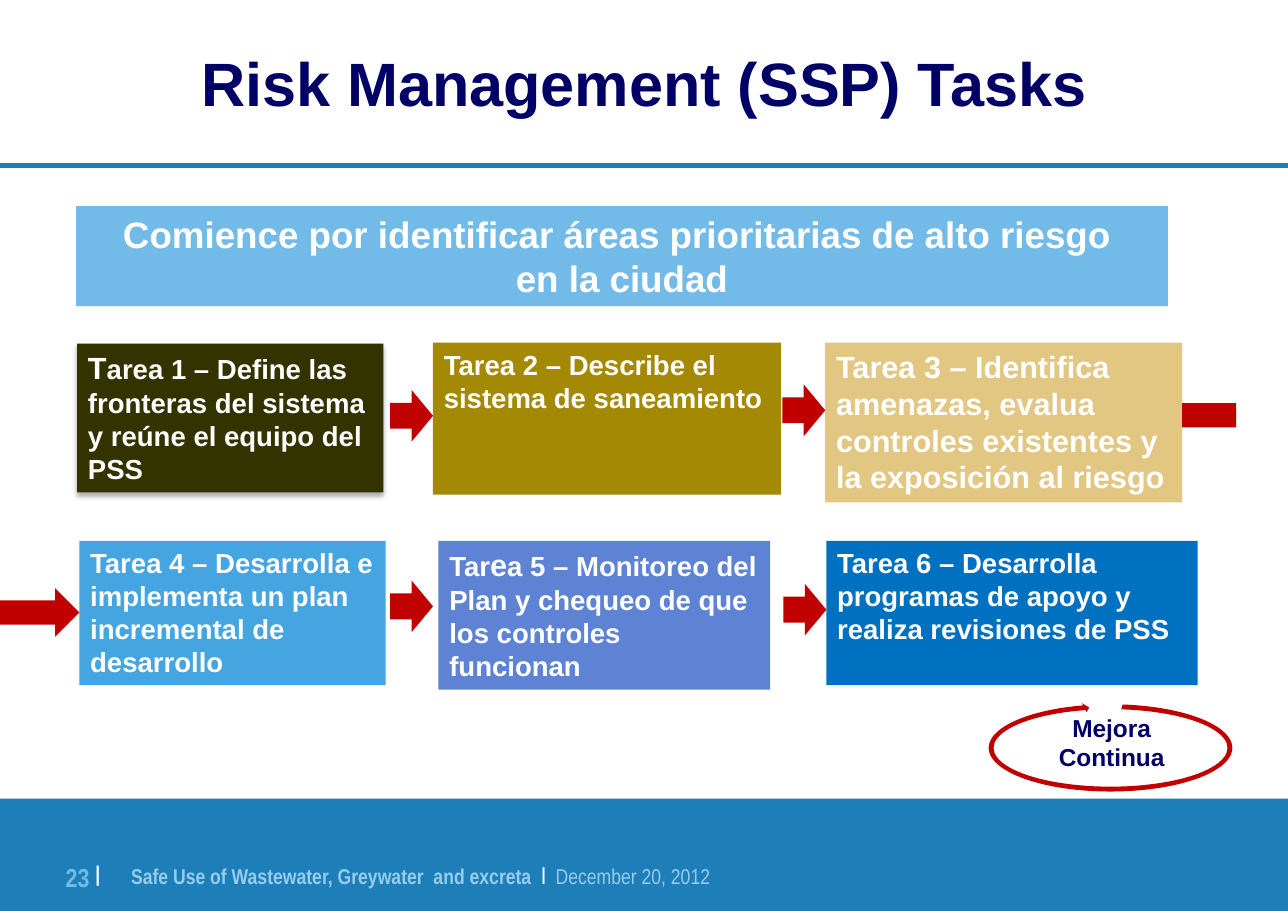
from lxml import etree
from pptx import Presentation, util as u
from pptx.dml.color import RGBColor
from pptx.enum import shapes, text
from pptx.oxml.ns import qn

WHITE, NAVY, RED, BLUE, SKY, PALE = "FFFFFF", "000066", "C00000", "1E7FB8", "72BBE8", "96CCEE"
LEFT, MID, RIGHT = text.PP_ALIGN.LEFT, text.PP_ALIGN.CENTER, text.PP_ALIGN.RIGHT
KIND = shapes.MSO_SHAPE


def paint(color, value):
    color.rgb = RGBColor.from_string(value)


def shade(props, color, alpha, blur, dist, angle):
    """Add an outer shadow; blur and dist are in points, angle in degrees."""
    for old in props.findall(qn("a:effectLst")):
        props.remove(old)
    effects = etree.Element(qn("a:effectLst"))
    shadow = etree.SubElement(effects, qn("a:outerShdw"), blurRad=str(u.Pt(blur)),
                              dist=str(u.Pt(dist)), dir=str(angle * 60000), rotWithShape="0")
    tone = etree.SubElement(shadow, qn("a:srgbClr"), val=color)
    etree.SubElement(tone, qn("a:alpha"), val=str(alpha * 1000))
    fill = props.find(qn("a:solidFill"))
    line = props.find(qn("a:ln"))
    (fill if line is None else line).addnext(effects)


class Deck:
    def __init__(self, wide, high):
        self.show = Presentation()
        self.show.slide_width, self.show.slide_height = u.Inches(wide), u.Inches(high)
        self.slide = self.show.slides.add_slide(self.show.slide_layouts[6])

    def shape(self, kind, place, fill):
        item = self.slide.shapes.add_shape(kind, *map(u.Inches, place))
        item.shadow.inherit = False
        item.fill.solid()
        paint(item.fill.fore_color, fill)
        item.line.fill.background()
        return item

    def rule(self, y, wide, color, weight):
        line = self.slide.shapes.add_connector(
            shapes.MSO_CONNECTOR.STRAIGHT, 0, u.Inches(y), u.Inches(wide), u.Inches(y))
        paint(line.line.color, color)
        line.line.width = u.Pt(weight)
        etree.SubElement(line._element.spPr, qn("a:effectLst"))

    def label(self, place):
        return self.slide.shapes.add_textbox(*map(u.Inches, place))

    def style(self, run, size, color, bold=True, font="Arial", rise=0):
        run.font.name, run.font.size, run.font.bold = font, u.Pt(size), bold
        paint(run.font.color, color)
        if rise:
            run.font._element.set("baseline", str(rise * 1000))

    def frame(self, item, align, anchor=text.MSO_ANCHOR.TOP, inset=True):
        box = item.text_frame
        box.word_wrap, box.vertical_anchor = True, anchor
        if not inset:
            box.margin_left = box.margin_top = box.margin_right = box.margin_bottom = 0
        box.paragraphs[0].alignment = align
        return box

    def put(self, item, words, size, color, align=LEFT, **layout):
        """Fill a shape with words in a single style."""
        box = self.frame(item, align, **layout)
        box.text = words
        for para in box.paragraphs:
            para.alignment = align
            for run in para.runs:
                self.style(run, size, color)
        return box

    def mix(self, item, parts, align=LEFT, **layout):
        """Fill one paragraph with (words, style) parts."""
        para = self.frame(item, align, **layout).paragraphs[0]
        for words, look in parts:
            run = para.add_run()
            run.text = words
            self.style(run, **look)

    def rings(self, place, fill, turns):
        """Draw a circular arrow shaped by its adjustments."""
        loop = self.shape(KIND.CIRCULAR_ARROW, place, fill)
        for i, value in enumerate(turns):
            loop.adjustments[i] = value


def main():
    deck = Deck(11.69, 8.27)
    deck.rule(1.5, 11.69, BLUE, 3)
    deck.shape(KIND.RECTANGLE, (0, 7.25, 11.69, 1.02), BLUE)

    note = dict(size=14, color=PALE, font="Arial Narrow")
    deck.mix(deck.label((1.19, 7.75, 5.43, 0.52)), [
        ("Safe Use of Wastewater, Greywater  and excreta  ", note),
        ("|", dict(note, size=20, color=WHITE, rise=12)),
        ("  ", note),
        ("December 20, 2012", dict(note, bold=False)),
    ], inset=False)
    page = dict(size=17, color=SKY, font="Arial Narrow")
    deck.mix(deck.label((0.46, 7.72, 0.45, 0.4)), [
        ("23 ", page),
        ("|", dict(page, size=24, color=WHITE, rise=14)),
    ], align=RIGHT, inset=False)

    title = deck.put(deck.label((0, 0, 11.69, 1.49)), "Risk Management (SSP) Tasks",
                     40, NAVY, MID, anchor=text.MSO_ANCHOR.MIDDLE, inset=False)
    shade(title.paragraphs[0].runs[0].font._element, PALE, 100, 0, 2, 45)

    deck.rings((8.95, 6.37, 2.26, 0.84), RED, (0.053, 3.126, 142.165, 171.338, 0.055))
    deck.put(deck.label((9, 6.42, 2.18, 0.91)), "Mejora\nContinua", 16, NAVY, MID)

    banner = deck.shape(KIND.RECTANGLE, (0.69, 1.87, 9.91, 0.91), SKY)
    deck.put(banner, "Comience por identificar áreas prioritarias de alto riesgo \ven la ciudad",
             24, WHITE, MID)

    small, large = dict(size=18, color=WHITE), dict(size=20, color=WHITE)
    tasks = [
        ((0.7, 3.12, 2.78, 1.35), "333300", [
            ("T", large),
            ("area 1 – Define las fronteras del sistema y reúne el equipo del PSS", small)]),
        ((3.93, 3.11, 3.16, 1.38), "A38904", [
            ("Tarea 2 – Describe el sistema de saneamiento", small)]),
        ((7.49, 3.11, 3.24, 1.45), "E2C782", [
            ("Tarea 3 – Identifica amenazas, evalua controles existentes y "
             "la exposición al riesgo", large)]),
        ((0.72, 4.91, 2.78, 1.31), "44A5E0", [
            ("Tarea 4 – Desarrolla e implementa un plan incremental de desarrollo", small)]),
        ((3.98, 4.91, 3.01, 1.35), "5E83D4", [
            ("Tar", small), ("e", large),
            ("a 5 – Monitoreo del Plan y chequeo de que los controles funcionan", small)]),
        ((7.5, 4.91, 3.37, 1.31), "0070C0", [
            ("Tarea 6 – Desarrolla programas de apoyo y realiza revisiones de PSS", small)]),
    ]
    cards = []
    for place, fill, parts in tasks:
        card = deck.shape(KIND.RECTANGLE, place, fill)
        deck.mix(card, parts)
        cards.append(card)
    shade(cards[0]._element.spPr, "000000", 32, 3.5, 2.2, 90)

    for x, y in ((3.54, 3.54), (7.1, 3.49), (3.54, 5.27), (7.11, 5.3)):
        deck.shape(KIND.RIGHT_ARROW, (x, y, 0.39, 0.47), RED)
    deck.shape(KIND.RECTANGLE, (10.73, 3.66, 0.49, 0.22), RED)
    deck.shape(KIND.RIGHT_ARROW, (0, 5.34, 0.72, 0.44), RED)
    deck.show.save("out.pptx")


if __name__ == "__main__":
    main()
